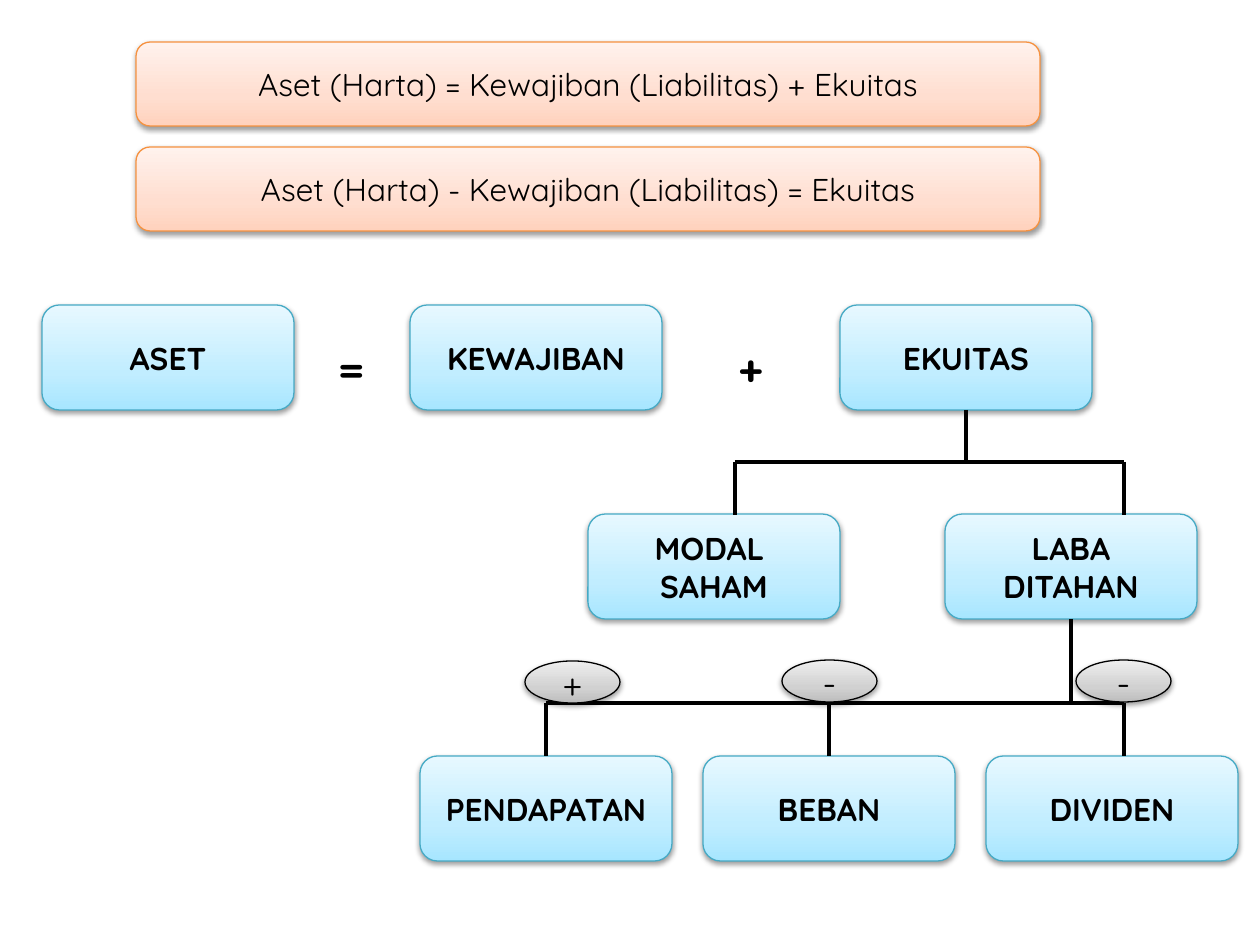
from copy import deepcopy
from dataclasses import dataclass

from lxml.etree import SubElement
from pptx import Presentation
from pptx.dml.color import RGBColor
from pptx.enum.shapes import MSO_CONNECTOR, MSO_SHAPE
from pptx.enum.text import MSO_ANCHOR, PP_ALIGN
from pptx.oxml import parse_xml
from pptx.oxml.ns import nsdecls, qn
from pptx.util import Pt

SCALE = 914400 / 126


def px(size):
    return round(size * SCALE)


@dataclass(frozen=True)
class Theme:
    font: str = "Quicksand"
    ink: str = "000000"
    body: int = 18
    badge: int = 20
    sign: int = 24
    thin: float = 0.75
    thick: float = 2.25
    stops: tuple = (0, 0.35, 1)
    peach: tuple = ("FFD2BD", "FFDED0", "FFF2ED")
    peach_edge: str = "F69240"
    blue: tuple = ("A7E6FF", "C1EDFF", "E7F8FF")
    blue_edge: str = "46AAC5"
    gray: tuple = ("BDBDBD", "D1D1D1", "EEEEEE")


class Deck:
    def __init__(self, theme):
        self.theme = theme
        self.show = Presentation()
        self.show.slide_width, self.show.slide_height = px(1260), px(945)
        self.slide = self.show.slides.add_slide(self.show.slide_layouts[6])

    def label(self, shape, text, size, bold):
        frame = shape.text_frame
        frame.word_wrap = True
        frame.text = text
        for para in frame.paragraphs:
            para.alignment = PP_ALIGN.CENTER
            for run in para.runs:
                run.font.name = self.theme.font
                run.font.size = Pt(size)
                run.font.bold = bold
                run.font.color.rgb = RGBColor.from_string(self.theme.ink)

    def fade(self, shape, tints):
        fill = shape.fill
        fill.gradient()
        fill.gradient_angle = 90
        stop_list = shape._element.spPr.find(qn("a:gradFill")).find(qn("a:gsLst"))
        stop_list.append(deepcopy(stop_list[0]))
        for stop, spot, tint in zip(fill.gradient_stops, self.theme.stops, tints):
            stop.position = spot
            stop.color.rgb = RGBColor.from_string(tint)

    def shade(self, shape):
        shape.shadow.inherit = False
        effects = shape._element.spPr.find(qn("a:effectLst"))
        effects.append(parse_xml(
            f'<a:outerShdw {nsdecls("a")} blurRad="40000" dist="20000" '
            f'dir="5400000" rotWithShape="0"><a:srgbClr val="{self.theme.ink}">'
            '<a:alpha val="38000"/></a:srgbClr></a:outerShdw>'))

    def panel(self, kind, place, text, tints, edge, size, bold=False):
        shape = self.slide.shapes.add_shape(kind, *map(px, place))
        self.fade(shape, tints)
        shape.line.color.rgb = RGBColor.from_string(edge)
        shape.line.width = Pt(self.theme.thin)
        self.shade(shape)
        shape.text_frame.vertical_anchor = MSO_ANCHOR.MIDDLE
        self.label(shape, text, size, bold)
        return shape

    def rule(self, top, text):
        look = self.theme
        self.panel(MSO_SHAPE.ROUNDED_RECTANGLE, (136, top, 904, 84), text,
                   look.peach, look.peach_edge, look.body)

    def box(self, left, top, text):
        look = self.theme
        return self.panel(MSO_SHAPE.ROUNDED_RECTANGLE, (left, top, 252, 105), text,
                          look.blue, look.blue_edge, look.body, True)

    def badge(self, left, top, text):
        look = self.theme
        self.panel(MSO_SHAPE.OVAL, (left, top, 95, 42), text,
                   look.gray, look.ink, look.badge)

    def sign(self, left, text):
        shape = self.slide.shapes.add_textbox(px(left), px(336), px(73), px(63))
        self.label(shape, text, self.theme.sign, True)

    def line(self, start, end, above=None, below=None):
        line = self.slide.shapes.add_connector(
            MSO_CONNECTOR.STRAIGHT, *map(px, (*start, *end)))
        line.line.color.rgb = RGBColor.from_string(self.theme.ink)
        line.line.width = Pt(self.theme.thick)
        SubElement(line._element.spPr, qn("a:effectLst"))
        if above is not None:
            line.begin_connect(above, 2)
        if below is not None:
            line.end_connect(below, 0)


def main():
    deck = Deck(Theme())
    deck.rule(42, "Aset (Harta) = Kewajiban (Liabilitas) + Ekuitas")
    deck.rule(147, "Aset (Harta) - Kewajiban (Liabilitas) = Ekuitas")

    deck.box(42, 305, "ASET")
    deck.box(410, 305, "KEWAJIBAN")
    equity = deck.box(840, 305, "EKUITAS")
    deck.box(588, 514, "MODAL \nSAHAM")
    profit = deck.box(945, 514, "LABA DITAHAN")
    income, expense, _ = [
        deck.box(420 + 283 * step, 756, text)
        for step, text in enumerate(("PENDAPATAN", "BEBAN", "DIVIDEN"))]
    deck.sign(315, "=")
    deck.sign(714, "+")

    deck.line((966, 410), (966, 462), above=equity)
    deck.line((735, 462), (1124, 462))
    for left in (735, 1124):
        deck.line((left, 462), (left, 515))
    for left, below in ((546, income), (829, expense), (1124, None)):
        deck.line((left, 703), (left, 756), below=below)
    deck.line((1071, 619), (1071, 703), above=profit)
    deck.line((546, 703), (1124, 703))

    for left, top, text in ((525, 661, "+"), (782, 660, "-"), (1076, 660, "-")):
        deck.badge(left, top, text)
    deck.show.save("out.pptx")


if __name__ == "__main__":
    main()
